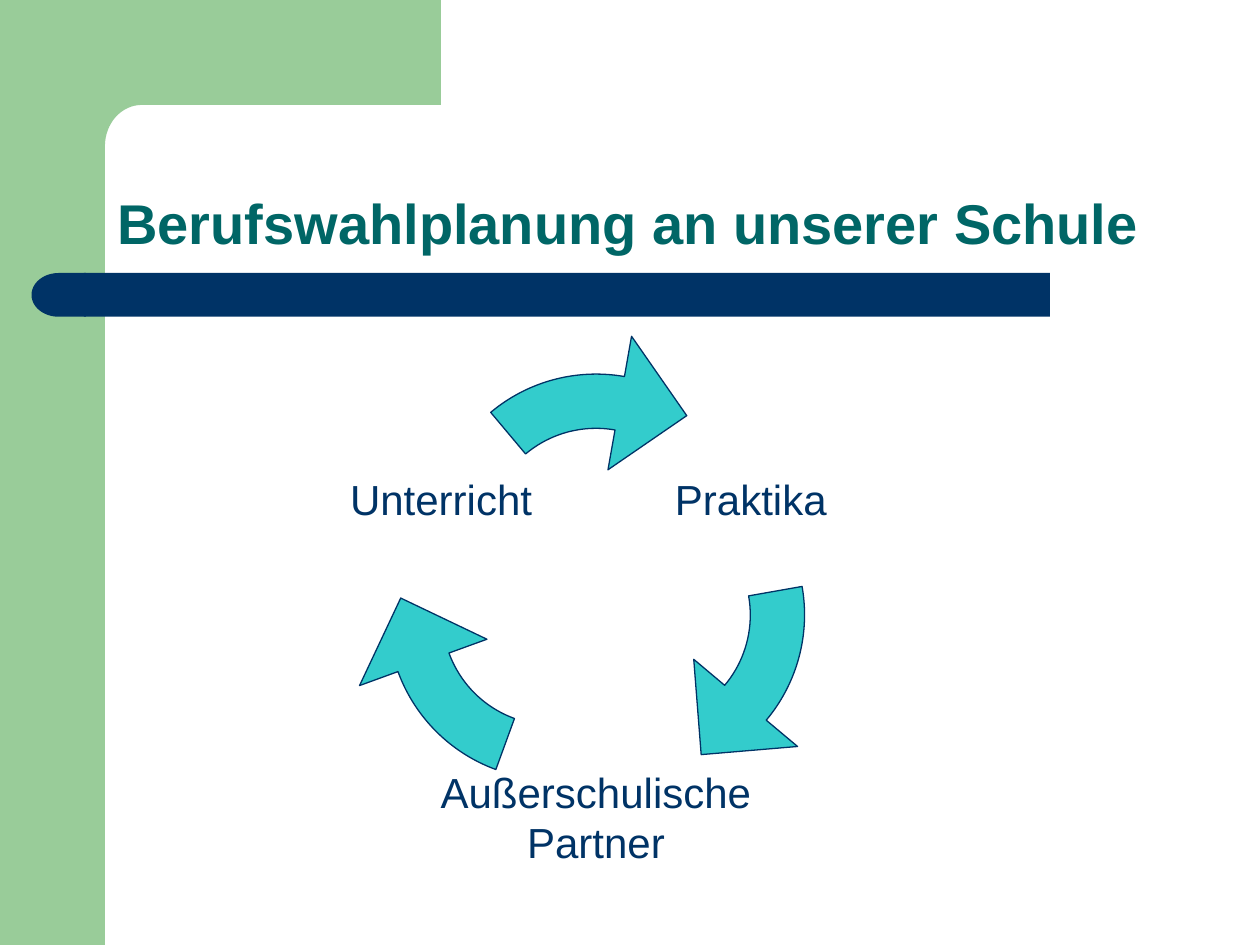
import math

import lxml.etree
import pptx
import pptx.dml.color
import pptx.enum.shapes
import pptx.enum.text
import pptx.oxml.ns
import pptx.util

Pt = pptx.util.Pt
RGBColor = pptx.dml.color.RGBColor
MSO_SHAPE = pptx.enum.shapes.MSO_SHAPE
ANCHOR = pptx.enum.text.MSO_ANCHOR
ALIGN = pptx.enum.text.PP_ALIGN
qn = pptx.oxml.ns.qn

GREEN = RGBColor(0x99, 0xCC, 0x99)
NAVY = RGBColor(0x00, 0x33, 0x66)
TEAL = RGBColor(0x00, 0x66, 0x66)
TURQUOISE = RGBColor(0x33, 0xCC, 0xCC)

TITLE = "Berufswahlplanung an unserer Schule"
LABELS = [
    (["Praktika"], (429, 285), 110),
    (["Außerschulische", "Partner"], (340.5, 466.8), 190),
    (["Unterricht"], (252, 285), 110),
]
LABEL_HEIGHT = 75
ARROWS = [((247, 213.8), 0), ((272.5, 257.8), 120), ((221.8, 258.1), 240)]

OUTER, INNER = 93.6, 62.6
HEAD_OUTER, HEAD_INNER = 117, 39.5
TIP_RADIUS, TIP_ANGLE = 87, -53.4
TAIL_ANGLE, TOP_ANGLE, HEAD_ANGLE = -130, -90, -80


def polar(center, radii, angle):
    angle = math.radians(angle)
    return center[0] + radii[0] * math.cos(angle), center[1] + radii[1] * math.sin(angle)


def curve(center, radii, start, end):
    pull = 4 / 3 * math.tan(math.radians(end - start) / 4)
    first, last = polar(center, radii, start), polar(center, radii, end)
    first_way = polar((0, 0), radii, start + 90)
    last_way = polar((0, 0), radii, end + 90)
    return ("cubicBezTo",
            (first[0] + pull * first_way[0], first[1] + pull * first_way[1]),
            (last[0] - pull * last_way[0], last[1] - pull * last_way[1]),
            last)


def arrow_steps():
    center = (OUTER, OUTER)

    def point(radius, angle):
        return polar(center, (radius, radius), angle)

    def bend(radius, start, end):
        return curve(center, (radius, radius), start, end)

    return [
        ("moveTo", point(INNER, HEAD_ANGLE)),
        bend(INNER, HEAD_ANGLE, TOP_ANGLE),
        bend(INNER, TOP_ANGLE, TAIL_ANGLE),
        ("lnTo", point(OUTER, TAIL_ANGLE)),
        bend(OUTER, TAIL_ANGLE, TOP_ANGLE),
        bend(OUTER, TOP_ANGLE, HEAD_ANGLE),
        ("lnTo", point(HEAD_OUTER, HEAD_ANGLE)),
        ("lnTo", point(TIP_RADIUS, TIP_ANGLE)),
        ("lnTo", point(HEAD_INNER, HEAD_ANGLE)),
        ("lnTo", point(INNER, HEAD_ANGLE)),
        ("close",),
    ]


def corner_steps():
    center, radii = (45, 83.5), (21, 23.5)
    return [
        ("moveTo", (216, 0)),
        ("lnTo", (216, 60)),
        ("lnTo", polar(center, radii, -90)),
        curve(center, radii, -90, -135),
        curve(center, radii, -135, -180),
        ("lnTo", (24, 92)),
        ("lnTo", (0, 92)),
        ("lnTo", (0, 0)),
        ("close",),
    ]


def style(shape, fill, line=None):
    shape.shadow.inherit = False
    shape.fill.solid()
    shape.fill.fore_color.rgb = fill
    if line is None:
        shape.line.fill.background()
    else:
        shape.line.color.rgb = line
        shape.line.width = Pt(0.75)
    return shape


def add_preset(slide, kind, box, fill):
    return style(slide.shapes.add_shape(kind, *map(Pt, box)), fill)


def add_outline(slide, box, steps, fill, line=None):
    left, top, width, height = map(Pt, box)
    builder = slide.shapes.build_freeform(left, top, scale=1.0)
    builder.add_line_segments([(left + width, top), (left + width, top + height),
                               (left, top + height)], close=True)
    shape = style(builder.convert_to_shape(), fill, line)
    outline = next(shape.element.iter(qn("a:path")))
    for child in list(outline):
        outline.remove(child)
    for command, *points in steps:
        step = lxml.etree.SubElement(outline, qn("a:" + command))
        for x, y in points:
            lxml.etree.SubElement(step, qn("a:pt"), x=str(int(Pt(x))), y=str(int(Pt(y))))
    return shape


def add_text(slide, lines, box, *, size, color, bold=False, align=ALIGN.LEFT,
             anchor=ANCHOR.MIDDLE, insets=(0, 0), spacing=1.0):
    frame = slide.shapes.add_textbox(*map(Pt, box)).text_frame
    frame.word_wrap = True
    frame.vertical_anchor = anchor
    frame.margin_left = frame.margin_right = Pt(insets[0])
    frame.margin_top = frame.margin_bottom = Pt(insets[1])
    for index, line in enumerate(lines):
        paragraph = frame.add_paragraph() if index else frame.paragraphs[0]
        paragraph.alignment = align
        paragraph.line_spacing = spacing
        run = paragraph.add_run()
        run.text = line
        run.font.name = "Arial"
        run.font.size = Pt(size)
        run.font.bold = bold
        run.font.color.rgb = color


def main():
    presentation = pptx.Presentation()
    presentation.slide_width, presentation.slide_height = Pt(720), Pt(540)
    slide = presentation.slides.add_slide(presentation.slide_layouts[6])

    add_preset(slide, MSO_SHAPE.RECTANGLE, (0, 0, 60, 540), GREEN)
    add_outline(slide, (36, 0, 216, 92), corner_steps(), GREEN)
    add_preset(slide, MSO_SHAPE.RECTANGLE, (48, 156, 552, 25), NAVY)
    bar_end = add_preset(slide, MSO_SHAPE.FLOWCHART_DELAY, (18, 156, 31, 25), NAVY)
    bar_end.rotation = 180

    add_text(slide, [TITLE], (60, 60, 624, 90), size=32, color=TEAL, bold=True,
             anchor=ANCHOR.BOTTOM, insets=(7.2, 3.6), spacing=0.9)
    for (left, top), turn in ARROWS:
        arrow = add_outline(slide, (left, top, 2 * OUTER, 2 * OUTER), arrow_steps(),
                            TURQUOISE, NAVY)
        arrow.rotation = turn
    for lines, (x, y), width in LABELS:
        box = (x - width / 2, y - LABEL_HEIGHT / 2, width, LABEL_HEIGHT)
        add_text(slide, lines, box, size=24, color=NAVY, align=ALIGN.CENTER)

    presentation.save("out.pptx")


if __name__ == "__main__":
    main()
